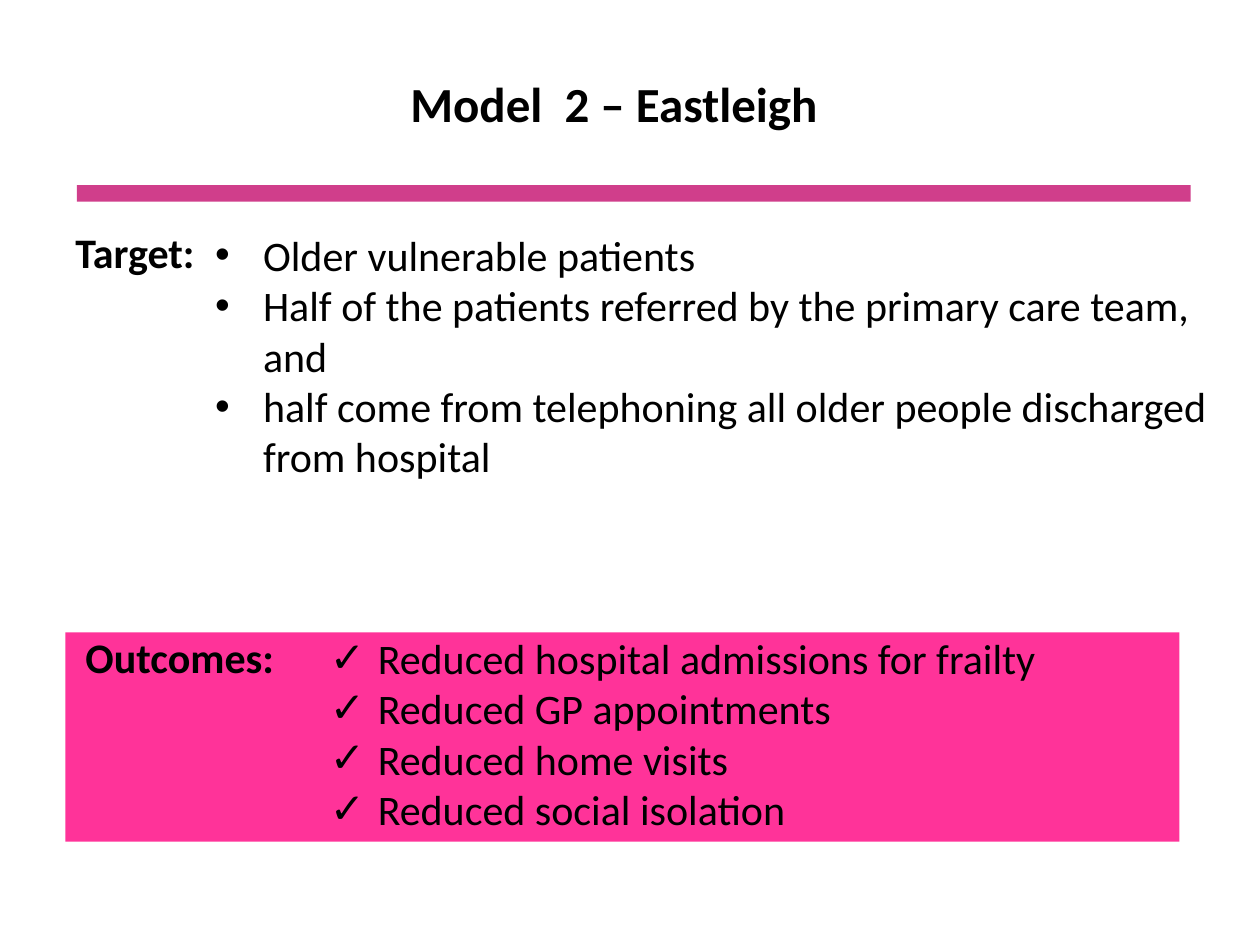
from dataclasses import dataclass

from lxml.etree import SubElement
from pptx import Presentation
from pptx.dml.color import RGBColor
from pptx.enum.shapes import MSO_SHAPE as Preset
from pptx.enum.text import MSO_ANCHOR as Anchor, PP_ALIGN as Align
from pptx.oxml.ns import qn
from pptx.slide import Slide
from pptx.util import Inches, Pt

BLACK = RGBColor(0x00, 0x00, 0x00)
PINK = RGBColor(0xFF, 0x33, 0x99)
ROSE = RGBColor(0xD0, 0x3E, 0x8B)
CELL = Inches(0.1)
COLUMNS, ROWS = 100, 75
HANGING = Inches(0.38)
FONT = "Calibri"


@dataclass(frozen=True)
class Area:
    column: float
    row: float
    columns: float
    rows: float

    def lengths(self) -> list[int]:
        return [round(cells * CELL) for cells in (self.column, self.row, self.columns, self.rows)]


@dataclass(frozen=True)
class Band:
    area: Area
    color: RGBColor


@dataclass(frozen=True)
class TextBlock:
    area: Area
    lines: tuple[str, ...]
    bullet: str = ""
    size: int = 24
    bold: bool = False
    wrap: bool = True
    align: Align = Align.LEFT
    anchor: Anchor = Anchor.TOP


BANDS = (
    Band(Area(5.2, 50.2, 88.4, 16.6), PINK),
    Band(Area(6.1, 14.7, 88.4, 1.3), ROSE),
)

TEXT_BLOCKS = (
    TextBlock(
        Area(0.4, 1.9, 97.5, 12.5),
        ("Model  2 – Eastleigh ",),
        size=28,
        bold=True,
        align=Align.CENTER,
        anchor=Anchor.MIDDLE,
    ),
    TextBlock(Area(5, 17.5, 90, 9.9), ("Target:",), bold=True),
    TextBlock(Area(5.8, 49.6, 17.1, 5), ("Outcomes:",), bold=True, wrap=False),
    TextBlock(
        Area(25.2, 49.7, 58.5, 17.2),
        (
            "Reduced hospital admissions for frailty",
            "Reduced GP appointments",
            "Reduced home visits",
            "Reduced social isolation",
        ),
        bullet="✓",
        wrap=False,
    ),
    TextBlock(
        Area(16.1, 17.7, 81.7, 21.2),
        (
            "Older vulnerable patients",
            "Half of the patients referred by the primary care team, and",
            "half come from telephoning all older people discharged from hospital",
        ),
        bullet="•",
    ),
)


def draw_band(slide: Slide, band: Band) -> None:
    shape = slide.shapes.add_shape(Preset.RECTANGLE, *band.area.lengths())
    shape.shadow.inherit = False
    shape.fill.solid()
    shape.fill.fore_color.rgb = band.color
    shape.line.fill.background()


def add_bullet(paragraph, character: str) -> None:
    properties = paragraph._p.get_or_add_pPr()
    properties.set("marL", str(HANGING))
    properties.set("indent", str(-HANGING))
    SubElement(properties, qn("a:buFont")).set("typeface", "Arial")
    SubElement(properties, qn("a:buChar")).set("char", character)


def draw_text(slide: Slide, block: TextBlock) -> None:
    text_frame = slide.shapes.add_textbox(*block.area.lengths()).text_frame
    text_frame.word_wrap = block.wrap
    text_frame.vertical_anchor = block.anchor
    text_frame.text = "\n".join(block.lines)
    for paragraph in text_frame.paragraphs:
        paragraph.alignment = block.align
        if block.bullet:
            add_bullet(paragraph, block.bullet)
        for run in paragraph.runs:
            run.font.name = FONT
            run.font.size = Pt(block.size)
            run.font.bold = block.bold
            run.font.color.rgb = BLACK


def main() -> None:
    presentation = Presentation()
    presentation.slide_width = COLUMNS * CELL
    presentation.slide_height = ROWS * CELL
    slide = presentation.slides.add_slide(presentation.slide_layouts[6])
    for band in BANDS:
        draw_band(slide, band)
    for block in TEXT_BLOCKS:
        draw_text(slide, block)
    presentation.save("out.pptx")


if __name__ == "__main__":
    main()
